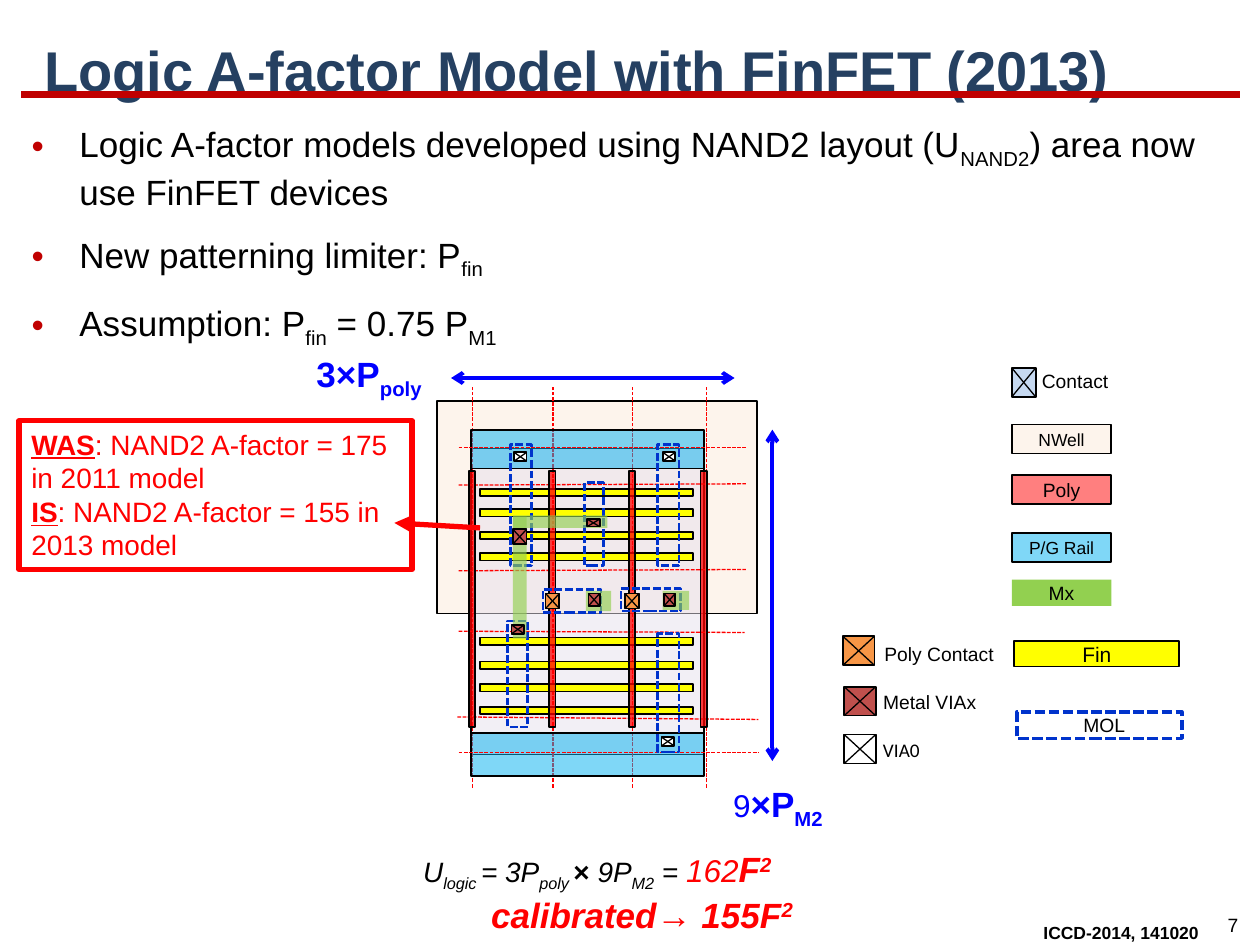
from lxml.etree import SubElement
from pptx import Presentation
from pptx.dml.color import RGBColor
from pptx.enum.dml import MSO_LINE
from pptx.enum.shapes import MSO_CONNECTOR, MSO_SHAPE
from pptx.enum.text import MSO_ANCHOR, MSO_AUTO_SIZE, PP_ALIGN
from pptx.oxml.ns import qn
from pptx.util import Inches, Pt

THEME = {
    "font": "Arial", "black": "000000", "red": "FF0000", "blue": "0000FF",
    "title": "254061", "rule": "C00000",
    "title_pt": 32, "body_pt": 20, "note_pt": 16, "label_pt": 11, "small_pt": 10,
}
STYLES = {
    "nwell": ("FDEADA", 50, "000000", 1, False),
    "active": ("E6E0EC", 50, "000000", 1, False),
    "rail": ("00B0F0", 50, "000000", 1, False),
    "poly": ("FF0000", 75, "000000", 1, False),
    "poly key": ("FF0000", 50, "000000", 1, False),
    "fin": ("FFFF00", 100, "000000", 1, False),
    "mol": (None, 100, "0033CC", 1.5, True),
    "mol key": (None, 100, "0033CC", 2, True),
    "mx": ("92D050", 65, None, 0, False),
    "mx key": ("92D050", 100, None, 0, False),
    "via0": ("FFFFFF", 100, "000000", 1, False),
    "viax": ("C0504D", 100, "000000", 1, False),
    "poly contact": ("F79646", 100, "000000", 1, False),
    "contact": ("C6D9F1", 100, "000000", 1, False),
    "callout": (None, 100, "FF0000", 3, False),
}
SUB, SUP = -25, 30

TITLE = "Logic A-factor Model with FinFET (2013)"
BULLETS = [
    [("Logic A-factor models developed using NAND2 layout (U",), ("NAND2", {"base": SUB}),
     (") area now use FinFET devices",)],
    [("New patterning limiter: P",), ("fin", {"base": SUB})],
    [("Assumption: P",), ("fin", {"base": SUB}), (" = 0.75 P",), ("M1", {"base": SUB})],
]
WIDTH_LABEL = [("3×P",), ("poly", {"base": SUB})]
HEIGHT_LABEL = [("9", {"size": 18, "bold": False}), ("×P",), ("M2", {"base": SUB})]
RED_BOLD = {"size": 20, "color": THEME["red"], "bold": True}
FORMULA = [
    [("U",), ("logic ", {"base": SUB}), ("= 3P",), ("poly ", {"base": SUB}),
     ("×", {"bold": True, "italic": False}), (" 9P",), ("M2", {"base": SUB}), (" = ",),
     ("162", {"size": 18, "color": THEME["red"]}), ("F", RED_BOLD),
     ("2", {**RED_BOLD, "base": SUP})],
    [("calibrated→ 155F", RED_BOLD), ("2", {**RED_BOLD, "base": SUP})],
]
HEAD = {"bold": True, "underline": True}
CALLOUT = [
    [("WAS", HEAD), (": NAND2 A-factor = 175 in 2011 model",)],
    [("IS", HEAD), (": NAND2 A-factor = 155 in 2013 model",)],
]

COLUMNS = [3.75, 4.39, 5.02, 5.61]
ROWS = [(3.64, 3.55, 5.92, 3.55), (3.64, 3.85, 5.92, 3.84), (3.64, 4.53, 5.92, 4.52),
        (3.64, 5.01, 5.91, 5.02), (3.63, 5.69, 6.02, 5.71), (3.64, 5.97, 6.02, 5.97)]
FINS = [3.88, 4.04, 4.22, 4.39, 5.06, 5.25, 5.43, 5.61]
GATES = [3.72, 4.36, 4.99, 5.56]
WELLS = [("nwell", 3.47, 3.18, 2.54, 1.69), ("active", 3.74, 3.56, 1.85, 2.43)]
RAILS = [("rail", 3.74, 3.41, 1.85, 0.31), ("rail", 3.74, 5.82, 1.85, 0.34)]
WIRING = [
    ("mol", 4.05, 3.53, 0.17, 0.96), ("mol", 5.22, 3.53, 0.17, 0.96),
    ("mol", 5.22, 5.03, 0.17, 0.94), ("mol", 4.64, 3.83, 0.15, 0.66),
    ("mol", 4.03, 4.93, 0.16, 0.84), ("mol", 4.31, 4.68, 0.46, 0.18),
    ("mol", 4.93, 4.67, 0.47, 0.18),
    ("mx", 4.07, 4.1, 0.11, 0.97), ("mx", 4.07, 4.09, 0.75, 0.1),
    ("mx", 4.65, 4.69, 0.2, 0.16), ("mx", 5.26, 4.69, 0.21, 0.15),
]
VIAS = [
    ("via0", 4.08, 3.59, 0.1, 0.07), ("via0", 5.26, 3.59, 0.1, 0.07),
    ("via0", 5.25, 5.85, 0.1, 0.07), ("viax", 4.06, 4.96, 0.1, 0.07),
    ("viax", 4.66, 4.12, 0.1, 0.06), ("viax", 4.07, 4.2, 0.11, 0.12),
    ("viax", 4.67, 4.71, 0.09, 0.1), ("viax", 5.27, 4.71, 0.09, 0.1),
    ("poly contact", 4.33, 4.71, 0.11, 0.12), ("poly contact", 4.96, 4.71, 0.11, 0.12),
]
KEY_VIAS = [
    ("contact", 8.03, 2.92, 0.19, 0.23), ("poly contact", 6.69, 5.05, 0.25, 0.23),
    ("viax", 6.7, 5.45, 0.25, 0.23), ("via0", 6.7, 5.83, 0.25, 0.23),
]
KEY_LABELS = [
    ("Contact", 8.17, 2.88, 0.78, "Arial"), ("Poly Contact", 6.92, 5.05, 1.08, "Arial"),
    ("Metal VIAx", 6.91, 5.43, 0.95, "Arial"), ("VIA0", 6.91, 5.81, 0.5, "Calibri"),
    ("MOL", 8.5, 5.61, 0.92, "Arial"),
]
KEY_BOXES = [
    ("NWell", "nwell", 8.03, 3.37, 0.79, 0.23, 10), ("Poly", "poly key", 8.03, 3.77, 0.79, 0.23, 11),
    ("P/G Rail", "rail", 8.03, 4.23, 0.79, 0.23, 10), ("Mx", "mx key", 8.03, 4.6, 0.79, 0.21, 11),
    ("Fin", "fin", 8.05, 5.09, 1.31, 0.2, 12),
]

prs = Presentation()
prs.slide_width, prs.slide_height = Inches(10), Inches(7.5)
s = prs.slides.add_slide(prs.slide_layouts[1])


def rgb(color):
    return RGBColor.from_string(color)


def place(sp, *box):
    sp.left, sp.top, sp.width, sp.height = map(Inches, box)


def write(p, runs, size, color=THEME["black"], font=THEME["font"], bold=False, italic=False):
    for text, *style in runs:
        look = {"size": size, "color": color, "bold": bold, "italic": italic}
        look.update(*style)
        r = p.add_run()
        r.text = text
        r.font.name, r.font.size = font, Pt(look["size"])
        r.font.bold, r.font.italic = look["bold"], look["italic"]
        r.font.underline = look.get("underline", False)
        r.font.color.rgb = rgb(look["color"])
        if "base" in look:
            r._r.get_or_add_rPr().set("baseline", str(look["base"] * 1000))


def fill_paragraphs(tf, paragraphs, **look):
    for i, runs in enumerate(paragraphs):
        p = tf.add_paragraph() if i else tf.paragraphs[0]
        write(p, runs, **look)


def label(box, paragraphs, align=PP_ALIGN.LEFT, wrap=True, **look):
    tf = s.shapes.add_textbox(*map(Inches, box)).text_frame
    tf.word_wrap = wrap
    fill_paragraphs(tf, paragraphs, **look)
    for p in tf.paragraphs:
        p.alignment = align
    return tf


def rect(style, *box):
    fill, alpha, line, width, dashed = STYLES[style]
    sp = s.shapes.add_shape(MSO_SHAPE.RECTANGLE, *map(Inches, box))
    sp.shadow.inherit = False
    if fill:
        sp.fill.solid()
        sp.fill.fore_color.rgb = rgb(fill)
        if alpha < 100:
            clr = sp.fill._xPr.find(qn("a:solidFill"))[0]
            SubElement(clr, qn("a:alpha"), val=str(alpha * 1000))
    else:
        sp.fill.background()
    if line:
        sp.line.color.rgb, sp.line.width = rgb(line), Pt(width)
        if dashed:
            sp.line.dash_style = MSO_LINE.SQUARE_DOT
    else:
        sp.line.fill.background()
    return sp


def line(x1, y1, x2, y2, color, width, dashed=False, head=None, tail=None):
    c = s.shapes.add_connector(MSO_CONNECTOR.STRAIGHT, *map(Inches, (x1, y1, x2, y2)))
    c.line.color.rgb, c.line.width = rgb(color), Pt(width)
    if dashed:
        c.line.dash_style = MSO_LINE.SQUARE_DOT
    for tag, kind in (("a:headEnd", head), ("a:tailEnd", tail)):
        if kind:
            SubElement(c.line._ln, qn(tag), type=kind)
    SubElement(c._element.spPr, qn("a:effectLst"))


def crossed(style, x, y, w, h):
    rect(style, x, y, w, h)
    line(x, y, x + w, y + h, THEME["black"], 0.75)
    line(x, y + h, x + w, y, THEME["black"], 0.75)


line(0.17, 0.75, 9.84, 0.75, THEME["rule"], 4.5)
title, body = s.placeholders
place(title, 0.25, -0.08, 9.25, 1.25)
title.text_frame.auto_size = MSO_AUTO_SIZE.NONE
title.text_frame.vertical_anchor = MSO_ANCHOR.MIDDLE
title.text_frame.paragraphs[0].alignment = PP_ALIGN.LEFT
write(title.text_frame.paragraphs[0], [(TITLE,)], THEME["title_pt"], THEME["title"], bold=True)

place(body, 0.15, 0.92, 9.67, 1.08)
body.text_frame.auto_size = MSO_AUTO_SIZE.NONE
fill_paragraphs(body.text_frame, BULLETS, size=THEME["body_pt"])
for p in body.text_frame.paragraphs:
    p.space_before = Pt(12)
    pPr = p._p.get_or_add_pPr()
    pPr.set("marL", str(Inches(0.38)))
    pPr.set("indent", str(Inches(-0.38)))
    SubElement(SubElement(pPr, qn("a:buClr")), qn("a:srgbClr"), val=THEME["rule"])
    SubElement(pPr, qn("a:buChar"), char="•")

for box in WELLS:
    rect(*box)
for x in COLUMNS:
    line(x, 6.25, x, 3.07, THEME["red"], 0.75, dashed=True)
for box in RAILS:
    rect(*box)
for y in FINS:
    rect("fin", 3.81, y, 1.69, 0.06)
for row in ROWS:
    line(*row, THEME["red"], 0.75, dashed=True)
for x in GATES:
    rect("poly", x, 3.74, 0.05, 2.03)
for box in WIRING:
    rect(*box)
for box in VIAS + KEY_VIAS:
    crossed(*box)

for text, style, *box, size in KEY_BOXES:
    tf = rect(style, *box).text_frame
    tf.vertical_anchor = MSO_ANCHOR.MIDDLE
    tf.paragraphs[0].alignment = PP_ALIGN.CENTER
    write(tf.paragraphs[0], [(text,)], size)
rect("mol key", 8.07, 5.65, 1.31, 0.21)
for text, x, y, w, font in KEY_LABELS:
    label((x, y, w, 0.29), [[(text,)]], size=THEME["label_pt"], font=font)

for ends in ((3.58, 3, 5.83, 3), (6.13, 3.41, 6.13, 6.04)):
    line(*ends, THEME["blue"], 2.25, head="arrow", tail="arrow")
dimension = {"size": THEME["body_pt"], "color": THEME["blue"], "bold": True}
label((2.18, 2.75, 1.5, 0.41), [WIDTH_LABEL], PP_ALIGN.CENTER, **dimension)
label((5.72, 6.16, 1.13, 0.44), [HEIGHT_LABEL], **dimension)

tf = label((3.26, 6.68, 3.25, 0.77), FORMULA, wrap=False, size=THEME["note_pt"], italic=True)
tf.paragraphs[1]._p.get_or_add_pPr().set("marL", str(Inches(0.54)))

line(3.81, 4.19, 3.13, 4.15, THEME["red"], 3, tail="triangle")
tf = rect("callout", 0.15, 3.34, 3.12, 1.18).text_frame
tf.word_wrap, tf.vertical_anchor = True, MSO_ANCHOR.TOP
fill_paragraphs(tf, CALLOUT, size=THEME["note_pt"], color=THEME["red"])
for p in tf.paragraphs:
    p.alignment = PP_ALIGN.LEFT

label((6.93, 7.27, 2.68, 0.27), [[("ICCD-2014, 141020",)]], PP_ALIGN.RIGHT,
      size=THEME["small_pt"], bold=True)
label((9.59, 7.2, 0.39, 0.29), [[("7",)]], PP_ALIGN.CENTER, wrap=False, size=THEME["label_pt"])

prs.save("out.pptx")
